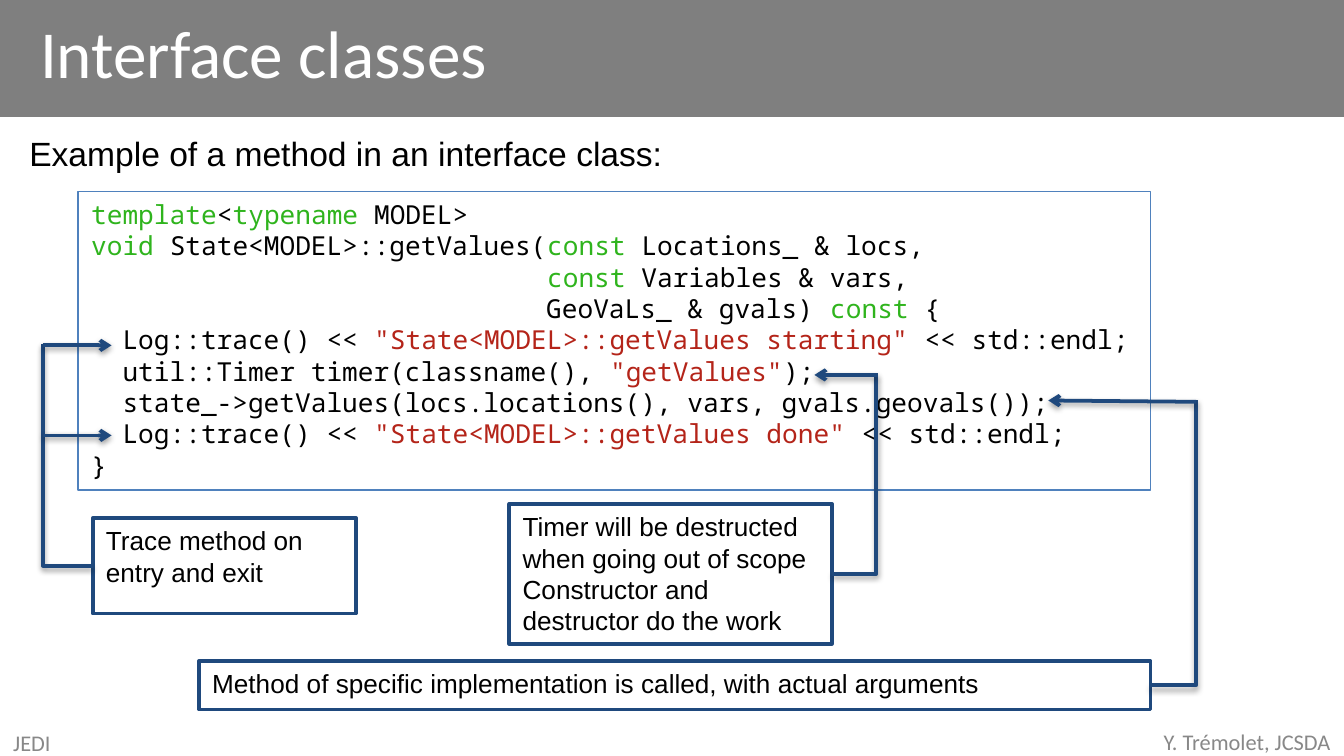
"""Build the slide on interface classes: a code listing with three linked notes."""
from lxml import etree
from pptx import Presentation
from pptx import util as u
from pptx.dml.color import RGBColor
from pptx.enum import shapes, text
from pptx.oxml import parse_xml
from pptx.oxml.ns import nsdecls, qn

BLACK = RGBColor(0x00, 0x00, 0x00)
WHITE = RGBColor(0xFF, 0xFF, 0xFF)
BAR = RGBColor(0x7F, 0x7F, 0x7F)
GREY = RGBColor(0x88, 0x88, 0x88)
GREEN = RGBColor(0x2F, 0xB4, 0x1D)
RED = RGBColor(0xB4, 0x24, 0x19)
BLUE = RGBColor(0x4F, 0x81, 0xBD)
NAVY = RGBColor(0x1F, 0x49, 0x7D)
LEFT, RIGHT = text.PP_ALIGN.LEFT, text.PP_ALIGN.RIGHT
TOP, MIDDLE = text.MSO_ANCHOR.TOP, text.MSO_ANCHOR.MIDDLE
STRAIGHT, ELBOW = shapes.MSO_CONNECTOR.STRAIGHT, shapes.MSO_CONNECTOR.ELBOW
CELL = u.Inches(0.1)
COLS, ROWS = 100, 56.25
INDENT = " " * 29
SHADOW = (f'<a:effectLst {nsdecls("a")}><a:outerShdw blurRad="40000" dist="20000" '
          'dir="5400000" rotWithShape="0"><a:srgbClr val="000000">'
          '<a:alpha val="38000"/></a:srgbClr></a:outerShdw></a:effectLst>')

prs = Presentation()
prs.slide_width, prs.slide_height = int(COLS * CELL), int(ROWS * CELL)
s = prs.slides.add_slide(prs.slide_layouts[6])


def add_box(place, lines, font, size, line=None, fill=None, align=LEFT, anchor=TOP, pitch=None):
    """Add a box at (column, row, columns, rows) holding lines of (text, colour) runs."""
    sp = s.shapes.add_shape(shapes.MSO_SHAPE.RECTANGLE, *(int(v * CELL) for v in place))
    sp.shadow.inherit = False
    sp.fill.background()
    sp.line.fill.background()
    if fill:
        sp.fill.solid()
        sp.fill.fore_color.rgb = fill
    if line:
        sp.line.color.rgb, sp.line.width = line[0], u.Pt(line[1])
    tf = sp.text_frame
    tf.word_wrap, tf.vertical_anchor = True, anchor
    for i, runs in enumerate(lines):
        p = tf.add_paragraph() if i else tf.paragraphs[0]
        p.alignment = align
        if pitch:
            p.line_spacing = u.Pt(pitch)
        for words, colour in runs:
            r = p.add_run()
            r.text = words
            r.font.name, r.font.size, r.font.color.rgb = font, u.Pt(size), colour


def add_link(kind, *ends):
    """Add an elbow, or a straight arrow, between two grid points."""
    c = s.shapes.add_connector(kind, *(int(v * CELL) for v in ends))
    c.line.color.rgb, c.line.width = NAVY, u.Pt(2)
    props = c._element.spPr
    if kind == ELBOW:
        props.find(qn("a:prstGeom")).set("prst", "bentConnector2")
    else:
        etree.SubElement(props.find(qn("a:ln")), qn("a:tailEnd"), type="arrow")
    props.append(parse_xml(SHADOW))


add_box((0, 0, COLS, 8.7), [], "Calibri", 36, fill=BAR)
add_box((2, 0, 83.4, 7.7), [[("Interface classes", WHITE)]], "Calibri", 36, anchor=MIDDLE)
add_box((0, 54.2, 23.3, 2.05), [[("JEDI", GREY)]], "Calibri", 12, anchor=MIDDLE)
add_box((68.3, 54.2, 31.7, 2), [[("Y. Trémolet, JCSDA", GREY)]], "Calibri", 12,
        align=RIGHT, anchor=MIDDLE)
add_box((1.2, 9.4, 49.6, 4), [[("Example of a method in an interface class:", BLACK)]],
        "Arial", 18)

code = [
    [("template", GREEN), ("<", BLACK), ("typename", GREEN), (" MODEL>", BLACK)],
    [("void", GREEN), (" State<MODEL>::getValues(", BLACK), ("const", GREEN),
     (" Locations_ & locs,", BLACK)],
    [(INDENT, BLACK), ("const", GREEN), (" Variables & vars,", BLACK)],
    [(INDENT + "GeoVaLs_ & gvals) ", BLACK), ("const ", GREEN), ("{", BLACK)],
    [("  Log::trace() << ", BLACK), ('"State<MODEL>::getValues starting"', RED),
     (" << std::endl;", BLACK)],
    [("  util::Timer timer(classname(), ", BLACK), ('"getValues"', RED), (");", BLACK)],
    [("  state_->getValues(locs.locations(), vars, gvals.geovals());", BLACK)],
    [("  Log::trace() << ", BLACK), ('"State<MODEL>::getValues done"', RED),
     (" << std::endl;", BLACK)],
    [("}", BLACK)],
]
add_box((5.8, 14.25, 79.8, 22.2), code, "Noto Sans Mono", 14, line=(BLUE, 0.75), pitch=16.8)

notes = [
    ((6.9, 38.55, 19.6, 7.1), ["Trace method on", "entry and exit"],
     (6.9, 42.1, 3.2, 25.6), [(3.2, 25.7, 8.3, 25.7), (3.2, 32.4, 8.3, 32.4)]),
    ((37.9, 37.5, 24, 10.4), ["Timer will be destructed", "when going out of scope",
                              "Constructor and", "destructor do the work"],
     (61.9, 42.7, 65.2, 27.9), [(65.3, 27.9, 60.6, 27.9)]),
    ((14.8, 49.2, 70.8, 3.6),
     ["Method of specific implementation is called, with actual arguments"],
     (85.6, 51, 89, 29.8), [(89, 29.9, 78, 29.8)]),
]
for place, lines, elbow, arrows in notes:
    add_box(place, [[(words, BLACK)] for words in lines], "Arial", 14, line=(NAVY, 2), pitch=16.8)
    add_link(ELBOW, *elbow)
    for arrow in arrows:
        add_link(STRAIGHT, *arrow)

prs.save("out.pptx")
